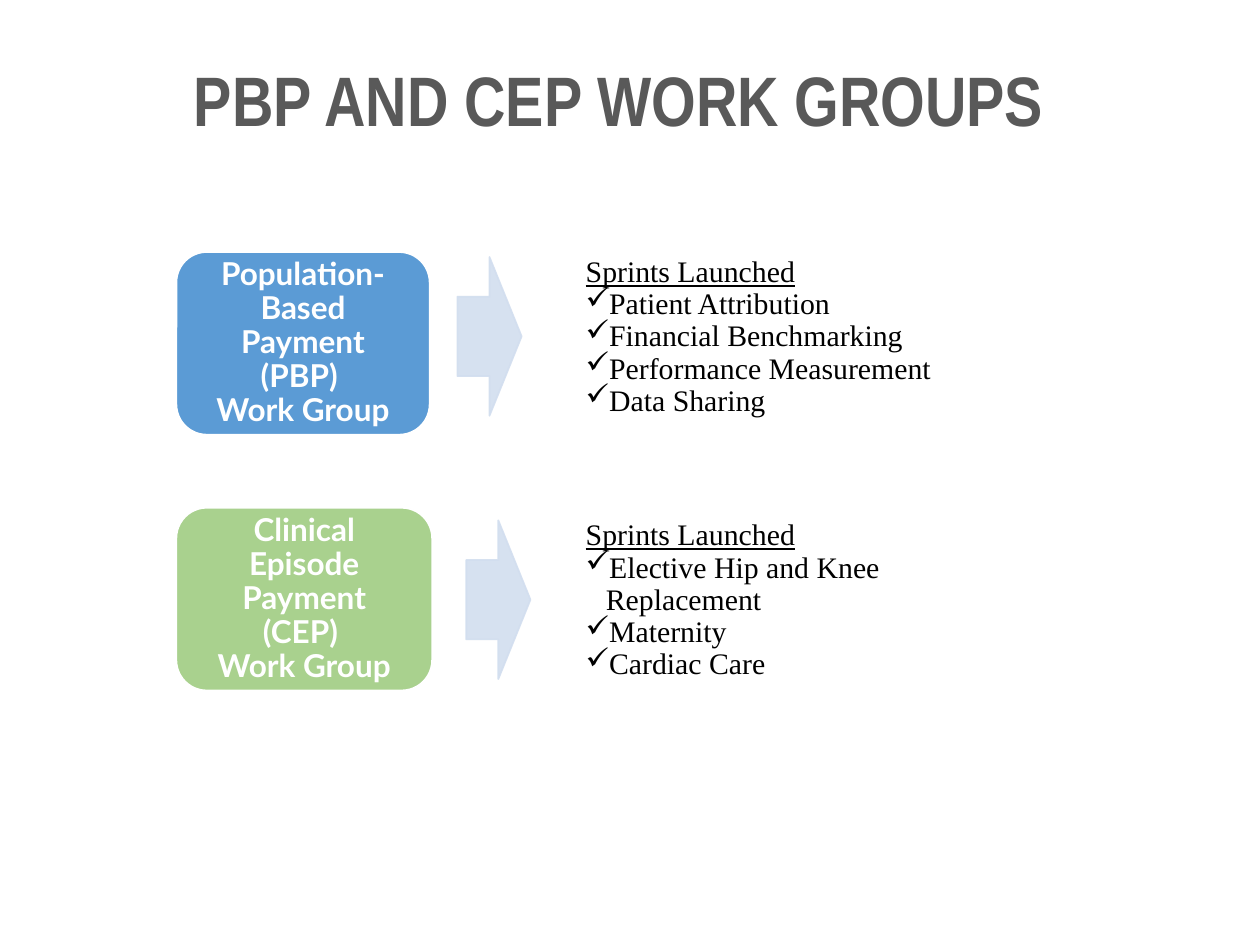
from dataclasses import dataclass

from lxml.etree import SubElement
from pptx import Presentation
from pptx.dml.color import RGBColor
from pptx.enum.shapes import MSO_SHAPE as Shape
from pptx.enum.text import MSO_ANCHOR as Anchor, PP_ALIGN as Align
from pptx.oxml.ns import qn
from pptx.util import Inches, Pt


@dataclass(frozen=True)
class Theme:
    """Colours, fonts and type sizes of the slide."""
    title_color: str = "595959"
    white: str = "FFFFFF"
    black: str = "000000"
    arrow: str = "D2DEEF"
    population: str = "5B9BD5"
    episode: str = "A9D18E"
    title_font: str = "Arial Narrow"
    group_font: str = "Lato"
    sprint_font: str = "Times New Roman"
    title_size: int = 40
    group_size: int = 18
    sprint_size: int = 17


THEME = Theme()
ROW_HEIGHT = 1.45
WORK_GROUPS = [
    {"top": 2, "width": 2.01, "arrow_left": 2.23, "arrow_top": 0.04,
     "list_top": -0.01, "list_width": 3.49, "color": THEME.population,
     "name": "Population-Based Payment (PBP) \vWork Group",
     "sprints": ["Patient Attribution", "Financial Benchmarking",
                 "Performance Measurement", "Data Sharing"]},
    {"top": 4.03, "width": 2.03, "arrow_left": 2.3, "arrow_top": 0.1,
     "list_top": 0.05, "list_width": 3.62, "color": THEME.episode,
     "name": "Clinical Episode Payment (CEP) \vWork Group",
     "sprints": ["Elective Hip and Knee Replacement", "Maternity",
                 "Cardiac Care"]},
]


def format_runs(paragraph, font_name, size, color, bold=False, underline=False):
    """Apply one character style to every run of a paragraph."""
    for run in paragraph.runs:
        run.font.name = font_name
        run.font.size = Pt(size)
        run.font.bold = bold
        run.font.underline = underline
        run.font.color.rgb = RGBColor.from_string(color)


def set_margins(text_frame, horizontal, vertical):
    """Set equal side margins and equal top and bottom margins."""
    text_frame.margin_left = text_frame.margin_right = Inches(horizontal)
    text_frame.margin_top = text_frame.margin_bottom = Inches(vertical)


def add_filled_shape(slide, kind, box, fill, line, opacity=100):
    """Add a flat preset shape with a thin outline."""
    shape = slide.shapes.add_shape(kind, *map(Inches, box))
    shape.shadow.inherit = False
    shape.fill.solid()
    shape.fill.fore_color.rgb = RGBColor.from_string(fill)
    shape.line.color.rgb = RGBColor.from_string(line)
    shape.line.width = Pt(1)
    if opacity < 100:
        for color in shape.element.spPr.iter(qn("a:srgbClr")):
            SubElement(color, qn("a:alpha"), val=str(opacity * 1000))
    return shape


def add_title(slide, left, top, width, height):
    """Place the centred slide title."""
    shape = slide.shapes.add_textbox(*map(Inches, (left, top, width, height)))
    text_frame = shape.text_frame
    text_frame.word_wrap = True
    text_frame.vertical_anchor = Anchor.MIDDLE
    set_margins(text_frame, 0.08, 0.04)
    text_frame.text = "PBP AND CEP WORK GROUPS"
    paragraph = text_frame.paragraphs[0]
    paragraph.alignment = Align.CENTER
    format_runs(paragraph, THEME.title_font, THEME.title_size,
                THEME.title_color, bold=True)


def add_group_box(slide, left, top, width, height, name, color):
    """Place the rounded box that names a work group."""
    shape = add_filled_shape(slide, Shape.ROUNDED_RECTANGLE,
                             (left, top, width, height), color, THEME.white)
    text_frame = shape.text_frame
    text_frame.word_wrap = True
    text_frame.vertical_anchor = Anchor.MIDDLE
    set_margins(text_frame, 0.13, 0.08)
    text_frame.text = name
    paragraph = text_frame.paragraphs[0]
    paragraph.alignment = Align.CENTER
    paragraph.line_spacing = 0.9
    format_runs(paragraph, THEME.group_font, THEME.group_size, THEME.white,
                bold=True)


def add_sprint_list(slide, left, top, width, height, sprints):
    """Place the underlined heading and its check-marked sprints."""
    shape = slide.shapes.add_textbox(*map(Inches, (left, top, width, height)))
    text_frame = shape.text_frame
    text_frame.word_wrap = True
    text_frame.text = "\n".join(["Sprints Launched", *sprints])
    for index, paragraph in enumerate(text_frame.paragraphs):
        paragraph.line_spacing = 0.9
        if index:
            properties = paragraph._p.get_or_add_pPr()
            properties.set("marL", str(Inches(0.16)))
            properties.set("indent", str(Inches(-0.16)))
            SubElement(properties, qn("a:buChar"), char="✓")
        format_runs(paragraph, THEME.sprint_font, THEME.sprint_size,
                    THEME.black, underline=index == 0)


def add_work_group(slide, left, top, group):
    """Place one row: group box, arrow and list of sprints."""
    add_group_box(slide, left, top, group["width"], ROW_HEIGHT,
                  group["name"], group["color"])
    arrow_box = (left + group["arrow_left"], top + group["arrow_top"], 0.51, 1.26)
    add_filled_shape(slide, Shape.RIGHT_ARROW, arrow_box, THEME.arrow,
                     THEME.arrow, opacity=90)
    add_sprint_list(slide, left + 3.15, top + group["list_top"],
                    group["list_width"], 1.39, group["sprints"])


def main():
    """Build and save the presentation."""
    presentation = Presentation()
    presentation.slide_width = Inches(10)
    presentation.slide_height = Inches(7.5)
    slide = presentation.slides.add_slide(presentation.slide_layouts[6])
    add_title(slide, 0.6, 0.47, 8.62, 0.63)
    for group in WORK_GROUPS:
        add_work_group(slide, 1.4, group["top"], group)
    presentation.save("out.pptx")


if __name__ == "__main__":
    main()
